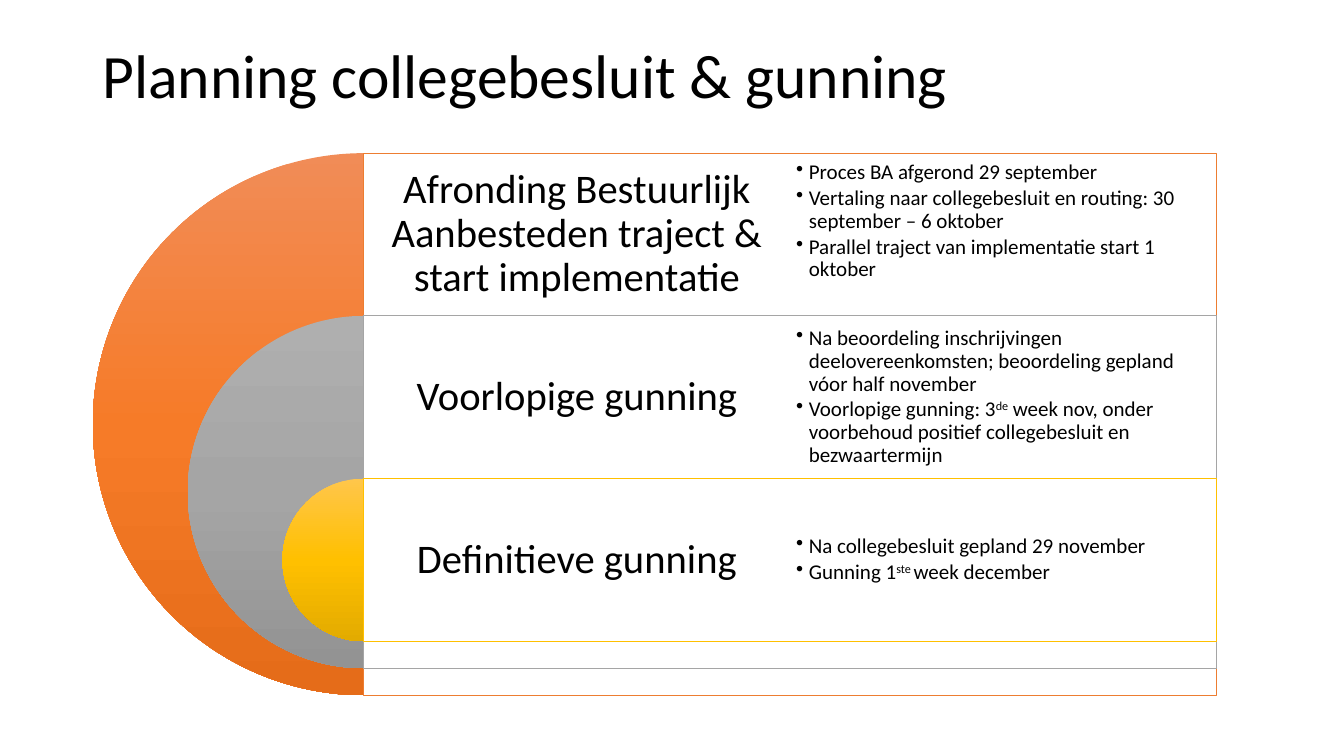
from copy import deepcopy

from lxml import etree
from pptx import Presentation
from pptx.dml.color import RGBColor
from pptx.enum.shapes import MSO_SHAPE
from pptx.enum.text import MSO_ANCHOR, PP_ALIGN
from pptx.oxml.ns import qn
from pptx.util import Cm, Pt

PIE, RECT = MSO_SHAPE.PIE, MSO_SHAPE.RECTANGLE
TOP, MIDDLE = MSO_ANCHOR.TOP, MSO_ANCHOR.MIDDLE
LEFT, CENTER = PP_ALIGN.LEFT, PP_ALIGN.CENTER
FONT = "Calibri"
BLACK = RGBColor(0x00, 0x00, 0x00)
WHITE = RGBColor(0xFF, 0xFF, 0xFF)
ORANGE = RGBColor(0xED, 0x7D, 0x31)
GREY = RGBColor(0xA5, 0xA5, 0xA5)
GOLD = RGBColor(0xFF, 0xC0, 0x00)
WARM = (RGBColor(0xF1, 0x8C, 0x57), RGBColor(0xF6, 0x7B, 0x28), RGBColor(0xE5, 0x6C, 0x19))
STONE = (RGBColor(0xAF, 0xAF, 0xAF), GREY, RGBColor(0x93, 0x93, 0x93))
SUN = (RGBColor(0xFF, 0xC6, 0x4B), GOLD, RGBColor(0xE3, 0xAB, 0x00))

ROW = 4.1
SHRINK = 4.78
PAD = 0.15
BLANK_LINE = 0.66

STAGES = [
    ("Afronding Bestuurlijk Aanbesteden traject & start implementatie", ORANGE, WARM, BLANK_LINE,
     ["Proces BA afgerond 29 september",
      "Vertaling naar collegebesluit en routing: 30 september – 6 oktober",
      "Parallel traject van implementatie start 1 oktober"]),
    ("Voorlopige gunning", GREY, STONE, 0,
     ["Na beoordeling inschrijvingen deelovereenkomsten; beoordeling gepland vóor half november",
      "Voorlopige gunning: 3^de^ week nov, onder voorbehoud positief collegebesluit en bezwaartermijn"]),
    ("Definitieve gunning", GOLD, SUN, 0,
     ["Na collegebesluit gepland 29 november",
      "Gunning 1^ste ^week december"]),
]


def add_text(slide, box, lines, size, align=LEFT, anchor=MIDDLE, pad=(0.25, 0.13)):
    """Add a text box; parts between carets become superscript."""
    frame = slide.shapes.add_textbox(*map(Cm, box)).text_frame
    frame.word_wrap = True
    frame.vertical_anchor = anchor
    frame.margin_left = frame.margin_right = Cm(pad[0])
    frame.margin_top = frame.margin_bottom = Cm(pad[1])
    for i, line in enumerate(lines):
        para = frame.add_paragraph() if i else frame.paragraphs[0]
        para.alignment = align
        para.line_spacing = 0.9
        for j, part in enumerate(line.split("^")):
            run = para.add_run()
            run.text = part
            run.font.name, run.font.size = FONT, Pt(size)
            run.font.color.rgb = BLACK
            if j % 2:
                run.font._element.set("baseline", "30000")
    return frame


def add_pie(slide, box, colors):
    """Add a left half disc with an even top-down gradient."""
    pie = slide.shapes.add_shape(PIE, *map(Cm, box))
    pie.shadow.inherit = False
    pie.adjustments[0], pie.adjustments[1] = 54, 162
    pie.line.fill.background()
    pie.fill.gradient()
    pie.fill.gradient_angle = 270
    first = next(pie._element.iter(qn("a:gs")))
    first.addnext(deepcopy(first))
    for i, (stop, color) in enumerate(zip(pie.fill.gradient_stops, colors)):
        stop.position = i / 2
        stop.color.rgb = color


def add_frame(slide, box, color):
    """Add a nearly opaque white panel with a thin coloured outline."""
    panel = slide.shapes.add_shape(RECT, *map(Cm, box))
    panel.shadow.inherit = False
    panel.fill.solid()
    panel.fill.fore_color.rgb = WHITE
    paint = next(panel._element.spPr.iter(qn("a:srgbClr")))
    etree.SubElement(paint, qn("a:alpha")).set("val", "90000")
    panel.line.color.rgb = color
    panel.line.width = Pt(0.5)


def add_list(slide, box, lines, tail):
    """Add a bulleted list, keeping a free tail below it."""
    frame = add_text(slide, box, lines, 15, pad=(PAD, PAD))
    frame.margin_bottom = Cm(PAD + tail)
    for para in frame.paragraphs:
        para.level = 1
        para.space_after = Pt(2.25)
        props = para._p.get_or_add_pPr()
        props.set("marL", str(Cm(0.32)))
        props.set("indent", str(-Cm(0.32)))
        etree.SubElement(props, qn("a:buChar")).set("char", "•")


def add_target(slide, box):
    """Draw the nested half discs with a panel, label and list for each stage."""
    left, top, width, height = box
    axis = left + height / 2
    half = (width - height / 2) / 2
    for i, (label, color, shades, tail, lines) in enumerate(STAGES):
        size, y = height - i * SHRINK, top + i * ROW
        add_pie(slide, (axis - size / 2, y, size, size), shades)
        add_frame(slide, (axis, y, 2 * half, size), color)
        add_text(slide, (axis, y, half, ROW), [label], 29, CENTER, pad=(0.3, 0.3))
    for i, (label, color, shades, tail, lines) in enumerate(STAGES):
        add_list(slide, (axis + half, top + i * ROW, half, ROW), lines, tail)


def main():
    """Build the planning slide."""
    deck = Presentation()
    deck.slide_width, deck.slide_height = Cm(33.87), Cm(19.05)
    slide = deck.slides.add_slide(deck.slide_layouts[6])
    add_text(slide, (2.33, 1.01, 29.21, 3.68), ["Planning collegebesluit & gunning"], 44, anchor=TOP)
    add_target(slide, (2.34, 3.86, 28.32, 13.66))
    deck.save("out.pptx")


if __name__ == "__main__":
    main()
